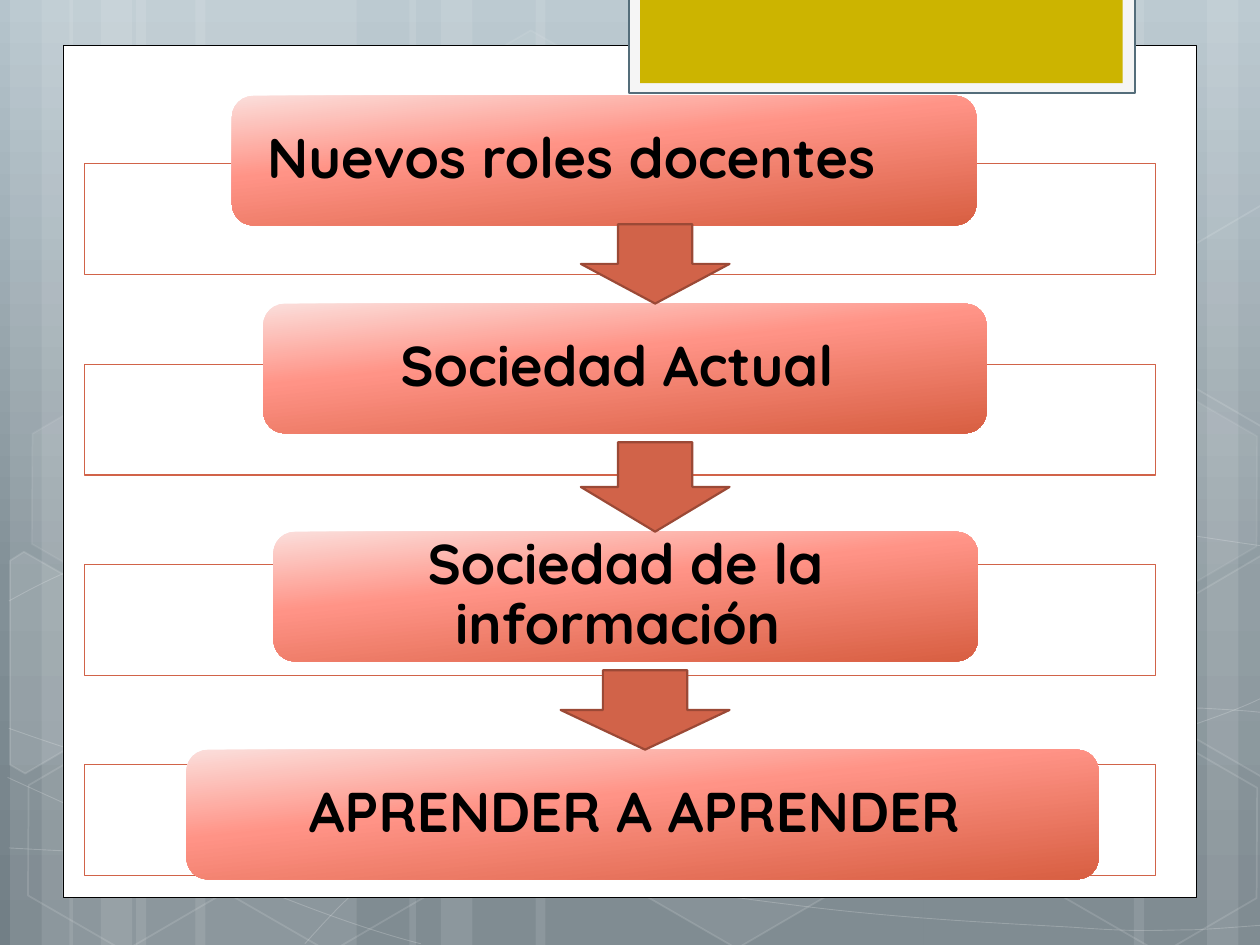
from copy import deepcopy
from dataclasses import dataclass

from lxml.etree import SubElement
from pptx import Presentation
from pptx.dml.color import RGBColor
from pptx.enum.shapes import MSO_SHAPE
from pptx.enum.text import MSO_ANCHOR, PP_ALIGN
from pptx.oxml.ns import qn
from pptx.util import Inches, Pt


@dataclass(frozen=True)
class Theme:
    font: str = "Quicksand"
    size: int = 32
    ink: str = "000000"
    white: str = "FFFFFF"
    accent: str = "D16349"
    accent_edge: str = "9B4936"
    tab_frame: str = "F5F5F5"
    tab_edge: str = "546D7A"
    tab: str = "CCB400"
    sky: tuple = ((0, "B5C4CC"), (62, "829097"), (100, "727F86"))
    coral: tuple = ((0, "FBDEDB"), (40, "FF9386"), (100, "D85F42"))


THEME = Theme()

STEPS = [
    ("Nuevos roles docentes", 1.84, 0.76, 5.91, PP_ALIGN.LEFT),
    ("Sociedad Actual ", 2.09, 2.41, 5.74, PP_ALIGN.CENTER),
    ("Sociedad de la información ", 2.17, 4.22, 5.59, PP_ALIGN.CENTER),
    ("APRENDER A APRENDER ", 1.48, 5.95, 7.24, PP_ALIGN.CENTER),
]
CARD_HEIGHT = 1.03
PANEL_TOP, PANEL_PITCH = 1.3, 1.59
ARROWS = [(4.61, 1.18, 0.63), (4.61, 1.18, 0.71), (4.45, 1.34, 0.63)]

STRIPES = [
    (1.08, 1.75), (0.08, 0.5), (0.33, 0.83), (1.55, 1.75), (0.55, 0.5), (0.8, 0.83),
    (7.33, 1.75), (9.58, 0.5), (9, 0.83), (4.25, 3.08), (3.25, 0.5), (3.5, 0.83),
]
HEXAGONS = [
    (3.34, 0.36, 4, 8), (4.97, 5.89, 6, 12), (0.11, 5.91, 0, 12),
    (0.14, 3.12, 7, 8), (1.74, 5.92, 0, 12), (7.53, 4.53, 10, 12),
    (8.34, 5.93, 0, 12), (8.34, 3.14, 7, 8),
]
CUT_HEXAGONS = [
    ([(0.08, 4.45), (0.19, 4.38), (0.96, 4.82), (0.95, 5.7), (0.2, 6.14), (0.08, 6.07)], 10),
    ([(9.26, 4.85), (10.01, 4.41), (10.09, 4.46), (10.09, 6.13), (10.02, 6.17), (9.26, 5.73)], 4),
    ([(9.26, 2.07), (10.01, 1.63), (10.1, 1.68), (10.09, 3.35), (10.02, 3.39), (9.26, 2.95)], 0),
]
WAVES = [
    [(0.07, 6.73), (0.61, 6.76), (1.15, 6.79), (1.9, 6.78), (2.65, 6.77), (3.58, 6.75),
     (4.58, 6.65), (5.58, 6.55), (7, 6.36), (7.92, 6.17), (8.83, 5.98), (9.77, 5.68),
     (10.07, 5.51)],
    [(0.07, 4.77), (0.36, 4.61), (0.65, 4.46), (1.21, 4.31), (1.78, 4.16), (2.59, 3.94),
     (3.47, 3.87), (4.36, 3.8), (5.44, 3.79), (6.54, 3.87), (7.64, 3.95), (9.47, 4.26),
     (10.07, 4.34)],
    [(0.06, 6.17), (1.27, 6.72), (2.47, 7.27), (3.34, 7.49)],
    [(0.07, 5.78), (0.38, 5.89), (0.7, 6), (1.28, 6.16), (1.86, 6.31), (2.73, 6.56),
     (3.57, 6.73), (4.4, 6.9), (5.45, 7.08), (6.28, 7.18), (7.11, 7.29), (8, 7.33),
     (8.53, 7.36), (9.05, 7.4), (9.19, 7.38), (9.45, 7.38), (9.71, 7.37), (9.89, 7.35),
     (10.07, 7.34)],
    [(2.42, 7.49), (2.6, 7.29), (2.78, 7.09), (3.02, 6.91), (3.26, 6.73), (3.6, 6.53),
     (3.88, 6.39), (4.16, 6.25), (4.33, 6.19), (4.7, 6.09), (5.06, 5.99), (5.73, 5.85),
     (6.08, 5.78), (6.44, 5.71), (6.49, 5.71), (6.8, 5.69), (7.11, 5.66), (7.6, 5.63),
     (7.94, 5.62), (8.29, 5.61), (8.86, 5.62), (8.86, 5.62), (9.08, 5.62), (9.31, 5.62),
     (9.53, 5.62), (9.71, 5.63), (9.88, 5.64), (9.97, 5.65), (10.06, 5.66), (10.03, 5.65),
     (10.06, 5.66)],
]


def paint(fill, parent, color, alpha=100):
    fill.solid()
    fill.fore_color.rgb = RGBColor.from_string(color)
    if alpha < 100:
        tint = parent.find(f"{qn('a:solidFill')}/{qn('a:srgbClr')}")
        SubElement(tint, qn("a:alpha"), val=str(alpha * 1000))


def blend(fill, owner, stops, angle):
    fill.gradient()
    fill.gradient_angle = 360 - angle
    stop_list = owner.find(f".//{qn('a:gsLst')}")
    stop_list.insert(1, deepcopy(stop_list[0]))
    for stop, (position, color) in zip(fill.gradient_stops, stops):
        stop.position = position / 100
        stop.color.rgb = RGBColor.from_string(color)


def style(shape, fill=None, alpha=100, edge=None, width=1, edge_alpha=100):
    shape.shadow.inherit = False
    if fill and alpha:
        paint(shape.fill, shape._element.spPr, fill, alpha)
    else:
        shape.fill.background()
    if edge:
        shape.line.width = Pt(width)
        paint(shape.line.fill, shape._element.spPr.find(qn("a:ln")), edge, edge_alpha)
    else:
        shape.line.fill.background()
    return shape


def add(slide, kind, box, **look):
    return style(slide.shapes.add_shape(kind, *map(Inches, box)), **look)


def outline(slide, points, close, **look):
    corners = [(Inches(x), Inches(y)) for x, y in points]
    builder = slide.shapes.build_freeform(*corners[0])
    builder.add_line_segments(corners[1:], close=close)
    return style(builder.convert_to_shape(), **look)


def bend(wave):
    route = wave._element.find(f".//{qn('a:path')}")
    segments = route.findall(qn("a:lnTo"))
    for start in range(0, len(segments), 3):
        curve = SubElement(route, qn("a:cubicBezTo"))
        for segment in segments[start:start + 3]:
            curve.append(segment[0])
            route.remove(segment)


def add_backdrop(slide):
    blend(slide.background.fill, slide._element, THEME.sky, 90)
    for left, width in STRIPES:
        add(slide, MSO_SHAPE.RECTANGLE, (left, 0, width, 7.5), fill=THEME.white, alpha=10)
    for wave in WAVES:
        bend(outline(slide, wave, False, edge=THEME.white, width=0.5, edge_alpha=20))
    for left, top, alpha, edge_alpha in HEXAGONS:
        hexagon = add(slide, MSO_SHAPE.HEXAGON, (left, top, 1.75, 1.52), fill=THEME.white,
                      alpha=alpha, edge=THEME.white, edge_alpha=edge_alpha)
        hexagon.adjustments[0] = 0.285
        hexagon.rotation = 30
    for corners, alpha in CUT_HEXAGONS:
        outline(slide, corners, True, fill=THEME.white, alpha=alpha,
                edge=THEME.white, edge_alpha=12)
    add(slide, MSO_SHAPE.RECTANGLE, (0.5, 0.36, 9, 6.76),
        fill=THEME.white, edge=THEME.ink, width=0.5)
    add(slide, MSO_SHAPE.RECTANGLE, (4.99, -0.02, 4.02, 0.76),
        fill=THEME.tab_frame, edge=THEME.tab_edge, width=1.25)
    add(slide, MSO_SHAPE.RECTANGLE, (5.08, -0.02, 3.83, 0.68), fill=THEME.tab)


def add_card(slide, label, left, top, width, alignment):
    card = add(slide, MSO_SHAPE.ROUNDED_RECTANGLE, (left, top, width, CARD_HEIGHT))
    blend(card.fill, card._element, THEME.coral, 84)
    frame = card.text_frame
    frame.word_wrap = True
    frame.vertical_anchor = MSO_ANCHOR.MIDDLE
    frame.margin_left = frame.margin_right = Inches(0.23)
    frame.margin_top = frame.margin_bottom = 0
    frame.text = label
    paragraph = frame.paragraphs[0]
    paragraph.alignment = alignment
    paragraph.line_spacing = 0.9
    font = paragraph.runs[0].font
    font.name, font.size, font.bold = THEME.font, Pt(THEME.size), True
    font.color.rgb = RGBColor.from_string(THEME.ink)


def main():
    deck = Presentation()
    deck.slide_width, deck.slide_height = Inches(10), Inches(7.5)
    slide = deck.slides.add_slide(deck.slide_layouts[6])
    add_backdrop(slide)
    for row, step in enumerate(STEPS):
        add(slide, MSO_SHAPE.RECTANGLE, (0.67, PANEL_TOP + row * PANEL_PITCH, 8.5, 0.88),
            fill=THEME.white, alpha=90, edge=THEME.accent, width=0.75)
        add_card(slide, *step)
    for (left, width, height), (_, _, next_top, _, _) in zip(ARROWS, STEPS[1:]):
        add(slide, MSO_SHAPE.DOWN_ARROW, (left, next_top - height, width, height),
            fill=THEME.accent, edge=THEME.accent_edge, width=1.25)
    deck.save("out.pptx")


if __name__ == "__main__":
    main()
